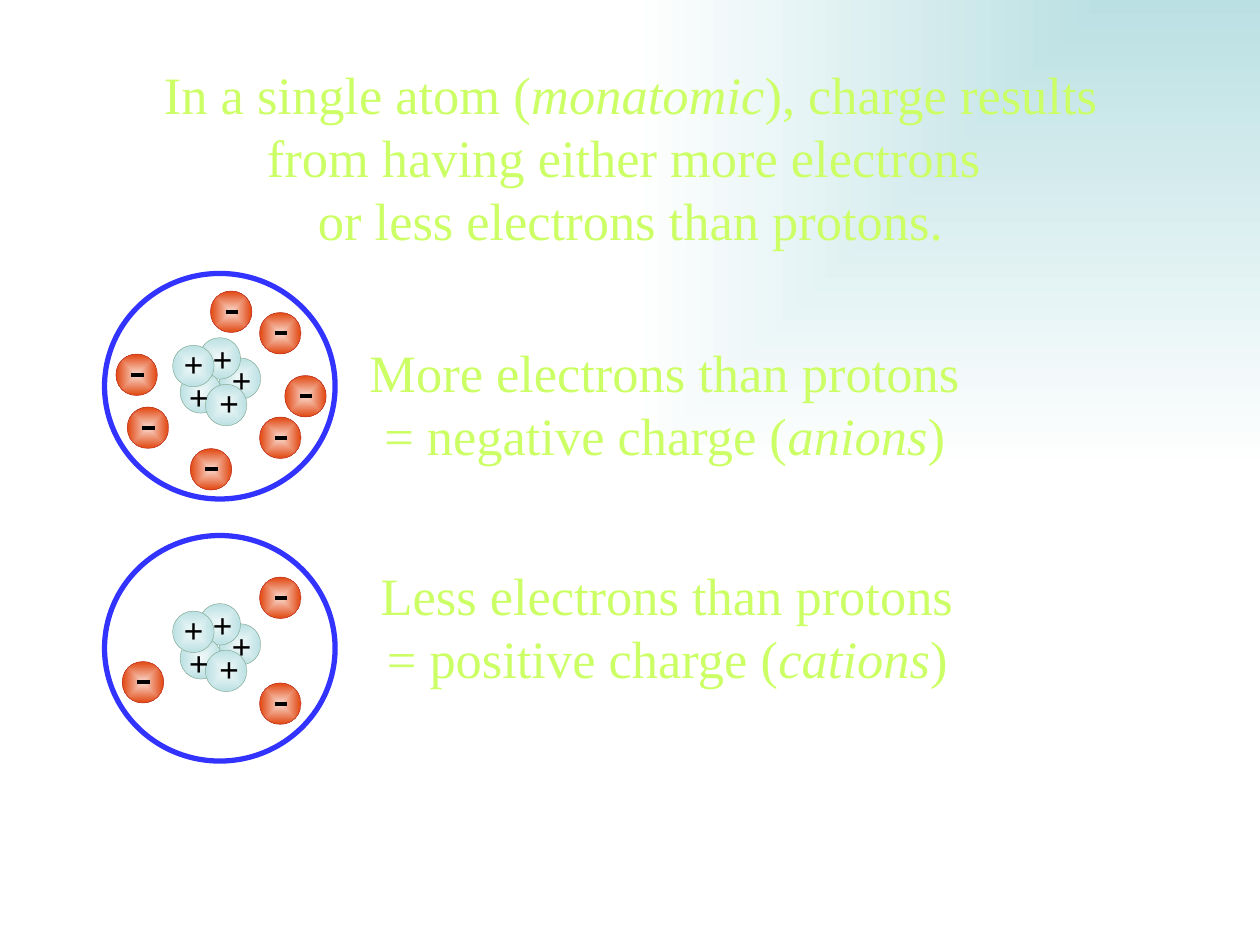
from pptx import Presentation
from pptx import util as u
from pptx.dml.color import RGBColor
from pptx.enum import shapes, text
from pptx.oxml.ns import qn
from lxml import etree

COLUMNS, ROWS = 10, 7.5
BALL = 0.33
PROTONS = [(0.37, 0.16), (0.21, 0), (0.06, 0.27), (0, 0.06), (0.26, 0.37)]
PLUSES = [(-0.01, -0.01), (0.03, 0.25), (0.37, 0.12), (0.27, 0.3), (0.22, -0.05)]


def colour(value):
    """Turn a hex string into a colour."""
    return RGBColor.from_string(value)


class AtomSlide:
    """Hold the style, the current slide and the group being filled."""

    font = "Times New Roman"
    lime, ink, ring = "CCFF66", "000000", "3333FF"
    proton = ("F2F9F9", "BBE0E3", "83A990")
    electron = ("F9DACF", "E1460F", "BB3329")

    def __init__(self, deck):
        """Add a title-only slide and measure its grid."""
        self.slide = deck.slides.add_slide(deck.slide_layouts[5])
        self.column = deck.slide_width / COLUMNS
        self.row = deck.slide_height / ROWS
        self.home = self.slide.shapes

    def place(self, left, top, width, height):
        """Convert grid columns and rows to slide lengths."""
        return (u.Emu(round(left * self.column)), u.Emu(round(top * self.row)),
                u.Emu(round(width * self.column)), u.Emu(round(height * self.row)))

    def gradient(self, owner, fill, start, end, kind, focus):
        """Fill an object with a two-colour gradient around a focus."""
        fill.gradient()
        for stop, value, position in zip(fill.gradient_stops, (start, end), (0, 1)):
            stop.color.rgb = colour(value)
            stop.position = position
        element = owner.element.find(".//" + qn("a:gradFill"))
        element.remove(element.find(qn("a:lin")))
        shade = etree.SubElement(element, qn("a:path"), {"path": kind})
        sides = {side: str(share * 1000) for side, share in zip("ltrb", focus)}
        etree.SubElement(shade, qn("a:fillToRect"), sides)

    def background(self, start, end):
        """Spread the background colour from the top right corner."""
        self.gradient(self.slide, self.slide.background.fill, start, end,
                      "rect", (100, 0, 0, 100))

    def letter(self, box, lines, size, value, bold=None, align=None):
        """Put lines into a box, with italics between asterisks."""
        frame = box.text_frame
        frame.word_wrap = False
        frame.auto_size = text.MSO_AUTO_SIZE.SHAPE_TO_FIT_TEXT
        frame.vertical_anchor = text.MSO_ANCHOR.TOP
        for number, line in enumerate(lines):
            para = frame.add_paragraph() if number else frame.paragraphs[0]
            para.alignment = align
            for index, piece in enumerate(line.split("*")):
                span = para.add_run()
                span.text = piece
                span.font.name = self.font
                span.font.size = u.Pt(size)
                span.font.bold = bold
                span.font.italic = index % 2 == 1
                span.font.color.rgb = colour(value)

    def title(self, area, lines):
        """Move and fill the title placeholder."""
        box = self.slide.shapes.title
        box.left, box.top, box.width, box.height = self.place(*area)
        self.letter(box, lines, 30, self.lime, align=text.PP_ALIGN.CENTER)

    def caption(self, area, lines):
        """Add a centred caption."""
        box = self.home.add_textbox(*self.place(*area))
        self.letter(box, lines, 30, self.lime, align=text.PP_ALIGN.CENTER)

    def circle(self, area, line, weight):
        """Add an outlined ellipse without a shadow."""
        shape = self.home.add_shape(shapes.MSO_SHAPE.OVAL, *self.place(*area))
        shape.shadow.inherit = False
        shape.fill.background()
        shape.line.color.rgb = colour(line)
        shape.line.width = u.Pt(weight)
        return shape

    def ball(self, left, top, tones):
        """Add a shaded particle."""
        start, end, edge = tones
        shape = self.circle((left, top, BALL, BALL), edge, 0.25)
        self.gradient(shape, shape.fill, start, end, "shape", (50, 50, 50, 50))

    def plus(self, left, top):
        """Add a plus sign."""
        box = self.home.add_textbox(*self.place(left, top, 0.36, 0.43))
        self.letter(box, ["+"], 20, self.ink, bold=True)

    def minus(self, left, top):
        """Add a minus bar."""
        x, y, length, _ = self.place(left, top, 0.1, 0)
        bar = self.home.add_connector(shapes.MSO_CONNECTOR.STRAIGHT,
                                      x, y, x + length, y)
        bar.line.color.rgb = colour(self.ink)
        bar.line.width = u.Pt(2.25)
        etree.SubElement(bar.element.spPr, qn("a:effectLst"))

    def atom(self, top, nucleus, electrons, area, lines):
        """Group a ring, its nucleus, its electrons and a caption."""
        self.home = self.slide.shapes.add_group_shape().shapes
        self.caption(area, lines)
        for across, down in PROTONS:
            self.ball(1.37 + across, nucleus + down, self.proton)
        for across, down in PLUSES:
            self.plus(1.37 + across, nucleus + down)
        for left, height in electrons:
            self.ball(left, height, self.electron)
            self.minus(left + 0.12, height + BALL / 2)
        self.circle((0.83, top, 1.83, 1.79), self.ring, 3)


def main():
    """Build the slide on monatomic ions."""
    deck = Presentation()
    deck.slide_width, deck.slide_height = u.Inches(10), u.Inches(7.5)
    page = AtomSlide(deck)
    page.background("BBE0E3", "FFFFFF")
    page.title((1.19, 0.44, 7.63, 1.6),
               ["In a single atom (*monatomic*), charge results",
                "from having either more electrons ",
                "or less electrons than protons."])
    page.atom(4.25, 4.79, [(0.97, 5.25), (2.06, 5.42), (2.06, 4.58)],
              (2.92, 4.42, 4.75, 1.1),
              ["Less electrons than protons", "= positive charge (*cations*)"])
    page.atom(2.17, 2.68,
              [(1.01, 3.23), (2.06, 3.31), (2.06, 2.48), (1.51, 3.56),
               (1.67, 2.31), (0.92, 2.81), (2.26, 2.98)],
              (2.83, 2.65, 4.89, 1.1),
              ["More electrons than protons", "= negative charge (*anions*)"])
    deck.save("out.pptx")


if __name__ == "__main__":
    main()
